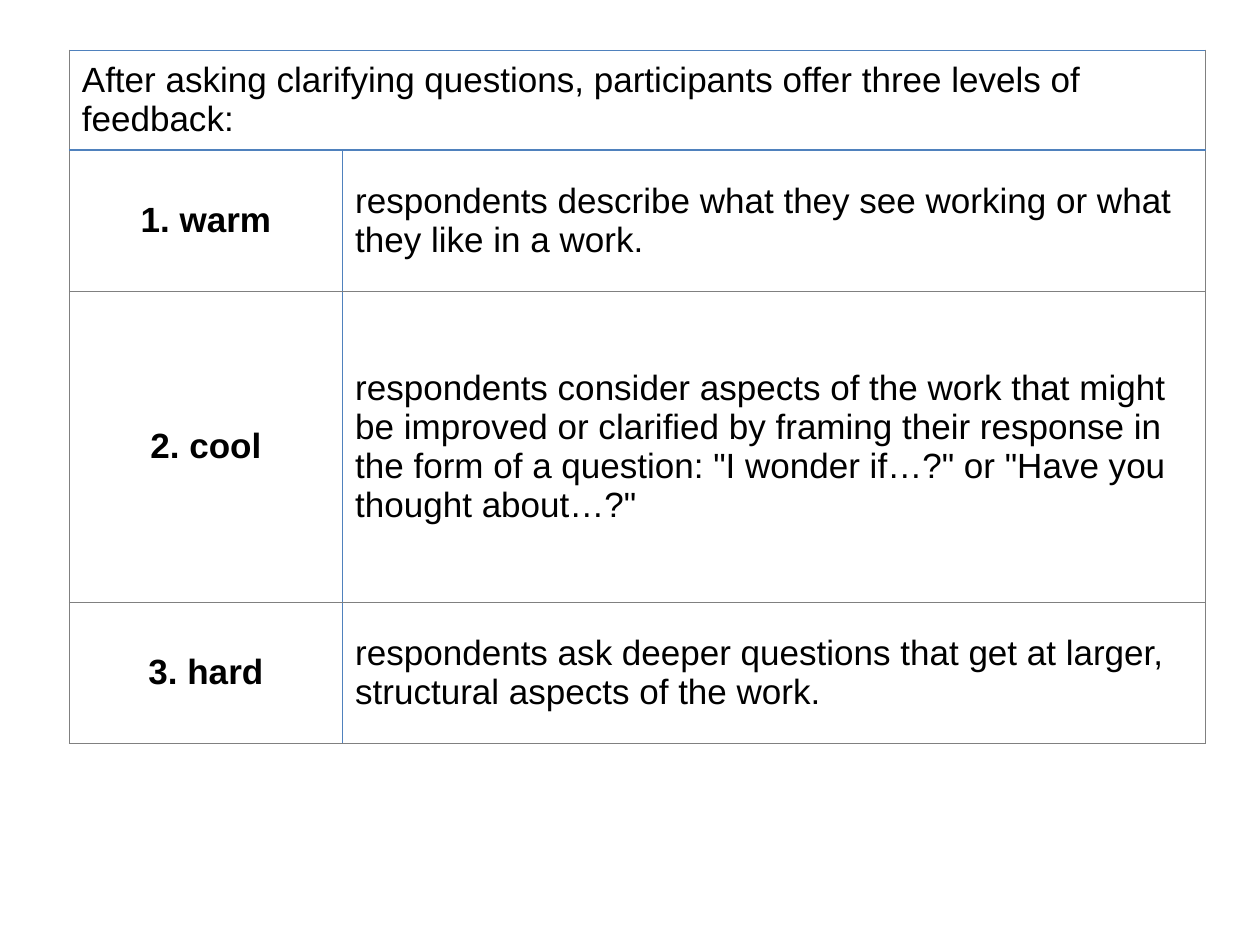
from typing import NamedTuple

from lxml import etree
from pptx import Presentation
from pptx.dml.color import RGBColor
from pptx.enum.text import MSO_ANCHOR, PP_ALIGN
from pptx.oxml.ns import qn
from pptx.util import Pt

LEFT, CENTER = PP_ALIGN.LEFT, PP_ALIGN.CENTER
MIDDLE = MSO_ANCHOR.MIDDLE
BLUE, GRAY, BLACK = "4F81BD", "808080", "000000"
COL_WIDTHS = (156.2, 493.2)
ROW_HEIGHTS = (56.9, 80.6, 177.8, 80.6)
TABLE_LEFT, TABLE_TOP = 39.6, 28.8


class Level(NamedTuple):
    name: str
    description: str


class Border(NamedTuple):
    color: str
    width: float


STRONG, THIN = Border(BLUE, 1), Border(GRAY, 0.5)
INTRO = "After asking clarifying questions, participants offer three levels of feedback:"
LEVELS = (
    Level("1. warm", "respondents describe what they see working or what they like in a work."),
    Level("2. cool", "respondents consider aspects of the work that might be improved or "
          "clarified by framing their response in the form of a question: "
          '"I wonder if…?" or "Have you thought about…?"'),
    Level("3. hard", "respondents ask deeper questions that get at larger, "
          "structural aspects of the work."),
)


def rgb(color: str) -> RGBColor:
    return RGBColor.from_string(color)


def set_borders(cell, left: Border, right: Border, top: Border, bottom: Border) -> None:
    tc_pr = cell._tc.get_or_add_tcPr()
    sides = {"a:lnL": left, "a:lnR": right, "a:lnT": top, "a:lnB": bottom}
    for i, (tag, border) in enumerate(sides.items()):
        ln = etree.Element(qn(tag), w=str(Pt(border.width)))
        fill = etree.SubElement(ln, qn("a:solidFill"))
        etree.SubElement(fill, qn("a:srgbClr"), val=border.color)
        tc_pr.insert(i, ln)


def write_cell(cell, text: str, bold: bool = False, align: PP_ALIGN = LEFT) -> None:
    cell.fill.background()
    cell.vertical_anchor = MIDDLE
    p = cell.text_frame.paragraphs[0]
    p.alignment = align
    r = p.add_run()
    r.text = text
    for name, value in {"name": "Arial", "size": Pt(20), "bold": bold}.items():
        setattr(r.font, name, value)
    r.font.color.rgb = rgb(BLACK)


def add_feedback_table(slide) -> None:
    table = slide.shapes.add_table(
        len(ROW_HEIGHTS), len(COL_WIDTHS), Pt(TABLE_LEFT), Pt(TABLE_TOP),
        Pt(sum(COL_WIDTHS)), Pt(sum(ROW_HEIGHTS))).table
    table.first_row = table.horz_banding = False
    for column, width in zip(table.columns, COL_WIDTHS):
        column.width = Pt(width)
    for row, height in zip(table.rows, ROW_HEIGHTS):
        row.height = Pt(height)

    intro, intro_end = table.cell(0, 0), table.cell(0, 1)
    intro.merge(intro_end)
    write_cell(intro, INTRO)
    for cell in (intro, intro_end):
        set_borders(cell, THIN, THIN, STRONG, STRONG)

    for i, level in enumerate(LEVELS, start=1):
        name, description = table.cell(i, 0), table.cell(i, 1)
        write_cell(name, level.name, bold=True, align=CENTER)
        write_cell(description, level.description)
        top = STRONG if i == 1 else THIN
        set_borders(name, THIN, STRONG, top, THIN)
        set_borders(description, STRONG, THIN, top, THIN)


def main() -> None:
    prs = Presentation()
    prs.slide_width, prs.slide_height = Pt(720), Pt(540)
    slide = prs.slides.add_slide(prs.slide_layouts[6])
    add_feedback_table(slide)
    prs.save("out.pptx")


if __name__ == "__main__":
    main()
